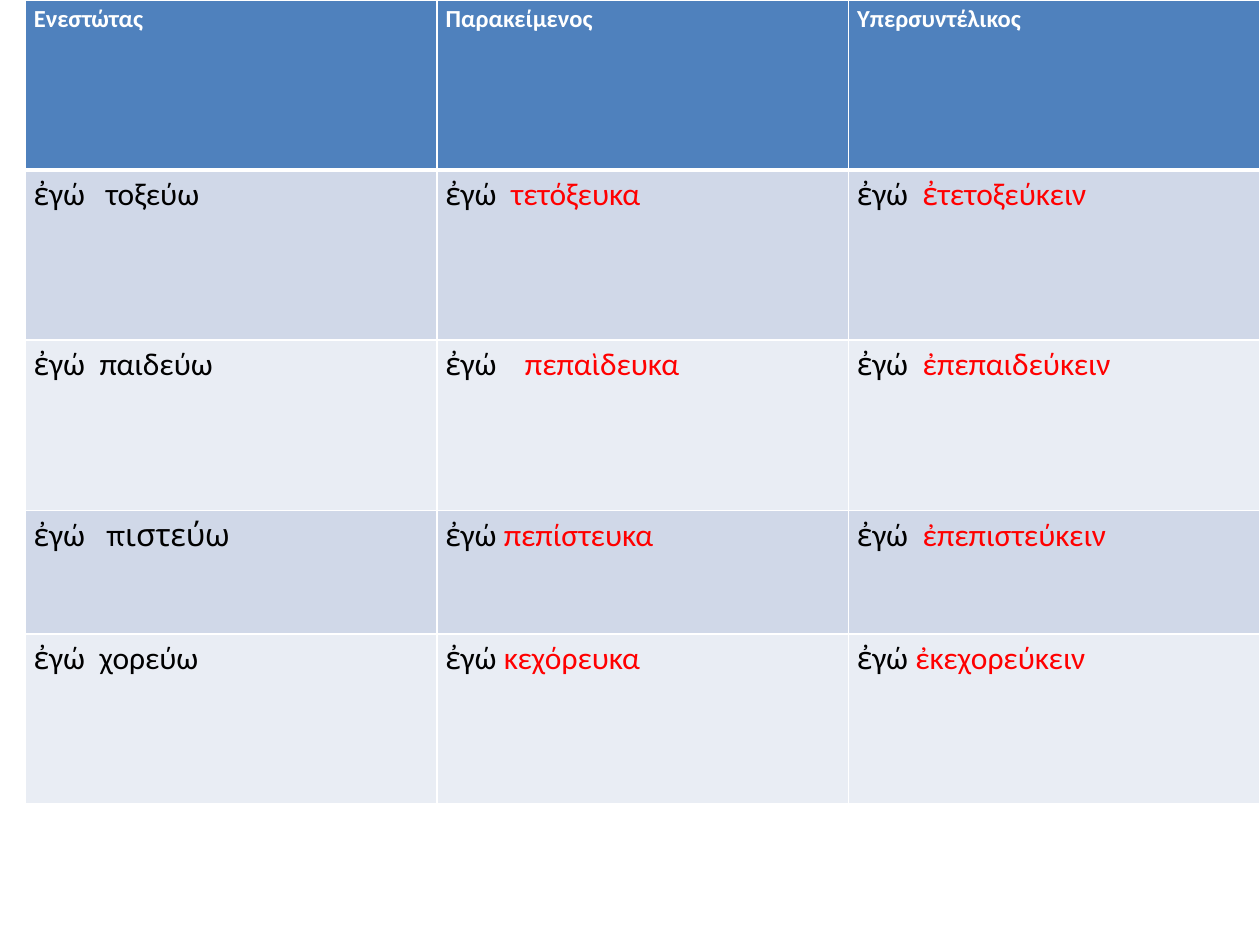
from lxml import etree
from pptx import Presentation
from pptx.dml.color import RGBColor as Rgb
from pptx.oxml.ns import qn
from pptx.util import Inches, Pt

WHITE = Rgb(0xFF, 0xFF, 0xFF)
BLACK = Rgb(0, 0, 0)
RED = Rgb(0xFF, 0, 0)
BLUE = Rgb(0x4F, 0x81, 0xBD)
BANDS = Rgb(0xD0, 0xD8, 0xE8), Rgb(0xE9, 0xED, 0xF4)
BODY, GREEK = "Calibri", "Karla"

HEADS = ["Ενεστώτας", "Παρακείμενος", "Υπερσυντέλικος"]
# Each verb: tab stop in inches (None for a plain space), then (text, font) parts
VERBS = [
    [(0.57, ("τοξεύω", BODY)), (0.52, ("τετόξευκα", BODY)),
     (0.52, ("ἐ", GREEK), ("τετοξεύκειν", BODY))],
    [(0.52, ("παιδεύω", BODY)), (0.63, ("πεπαὶδευκα", BODY)),
     (0.52, ("ἐπεπαιδεύκειν", BODY))],
    [(0.57, ("πιστεύω", GREEK)), (None, ("πεπίστευκα", BODY)),
     (0.52, ("ἐπεπιστεύκειν", BODY))],
    [(0.52, ("χορεύω", BODY)), (None, ("κεχόρευκα", BODY)),
     (None, ("ἐκεχορεύκειν", BODY))],
]
HIGHS = [1.35, 1.35, 1.35, 0.98, 1.35]


class Deck:
    def __init__(self):
        self.prs = Presentation()
        self.prs.slide_width, self.prs.slide_height = Inches(10), Inches(7.5)
        self.slide = self.prs.slides.add_slide(self.prs.slide_layouts[6])
        self.pad = {"margin_left": Inches(0.07), "margin_right": Inches(0.07),
                    "margin_top": 0, "margin_bottom": 0}

    def table(self, left, top, width, highs, cols):
        frame = self.slide.shapes.add_table(
            len(highs), cols, Inches(left), Inches(top),
            Inches(width), Inches(sum(highs)))
        for row, high in zip(frame.table.rows, highs):
            row.height = Inches(high)
        return frame.table

    def cell(self, cell, fill, runs, stop=None, top=1, base=1):
        for key, val in self.pad.items():
            setattr(cell, key, val)
        cell.fill.solid()
        cell.fill.fore_color.rgb = fill
        self.edges(cell, {"L": 1, "R": 1, "T": top, "B": base})
        para = cell.text_frame.paragraphs[0]
        if stop:
            tabs = etree.SubElement(para._p.get_or_add_pPr(), qn("a:tabLst"))
            etree.SubElement(tabs, qn("a:tab"), pos=str(Inches(stop)), algn="l")
        para.line_spacing = 1.15
        for text, style in runs:
            self.run(para, text, style)

    def run(self, para, text, style):
        run = para.add_run()
        run.text = text
        for key, val in style.items():
            if key == "color":
                run.font.color.rgb = val
            else:
                setattr(run.font, key, val)

    def edges(self, cell, sides):
        props = cell._tc.get_or_add_tcPr()
        for spot, (side, wide) in enumerate(sides.items()):
            line = etree.Element(qn(f"a:ln{side}"), w=str(Pt(wide)))
            fill = etree.SubElement(line, qn("a:solidFill"))
            etree.SubElement(fill, qn("a:srgbClr"), val=str(WHITE))
            props.insert(spot, line)


def style(font, color, size=18, bold=False):
    return {"name": font, "color": color, "size": Pt(size), "bold": bold}


def main():
    deck = Deck()
    grid = deck.table(0.2, 0, 9.8, HIGHS, len(HEADS))

    # Tense names
    for col, head in enumerate(HEADS):
        deck.cell(grid.cell(0, col), BLUE,
                  [(head, style(BODY, WHITE, 14, True))], base=3)

    # Verb forms, with the past tenses in red
    for row, verbs in enumerate(VERBS, 1):
        for col, (stop, *parts) in enumerate(verbs):
            color = RED if col else BLACK
            gap = "\t" if stop else " "
            runs = [("ἐ", style(GREEK, BLACK)), ("γώ" + gap, style(BODY, BLACK))]
            runs += [(text, style(font, color)) for text, font in parts]
            deck.cell(grid.cell(row, col), BANDS[(row - 1) % 2], runs, stop,
                      top=3 if row == 1 else 1)

    deck.prs.save("out.pptx")


if __name__ == "__main__":
    main()
